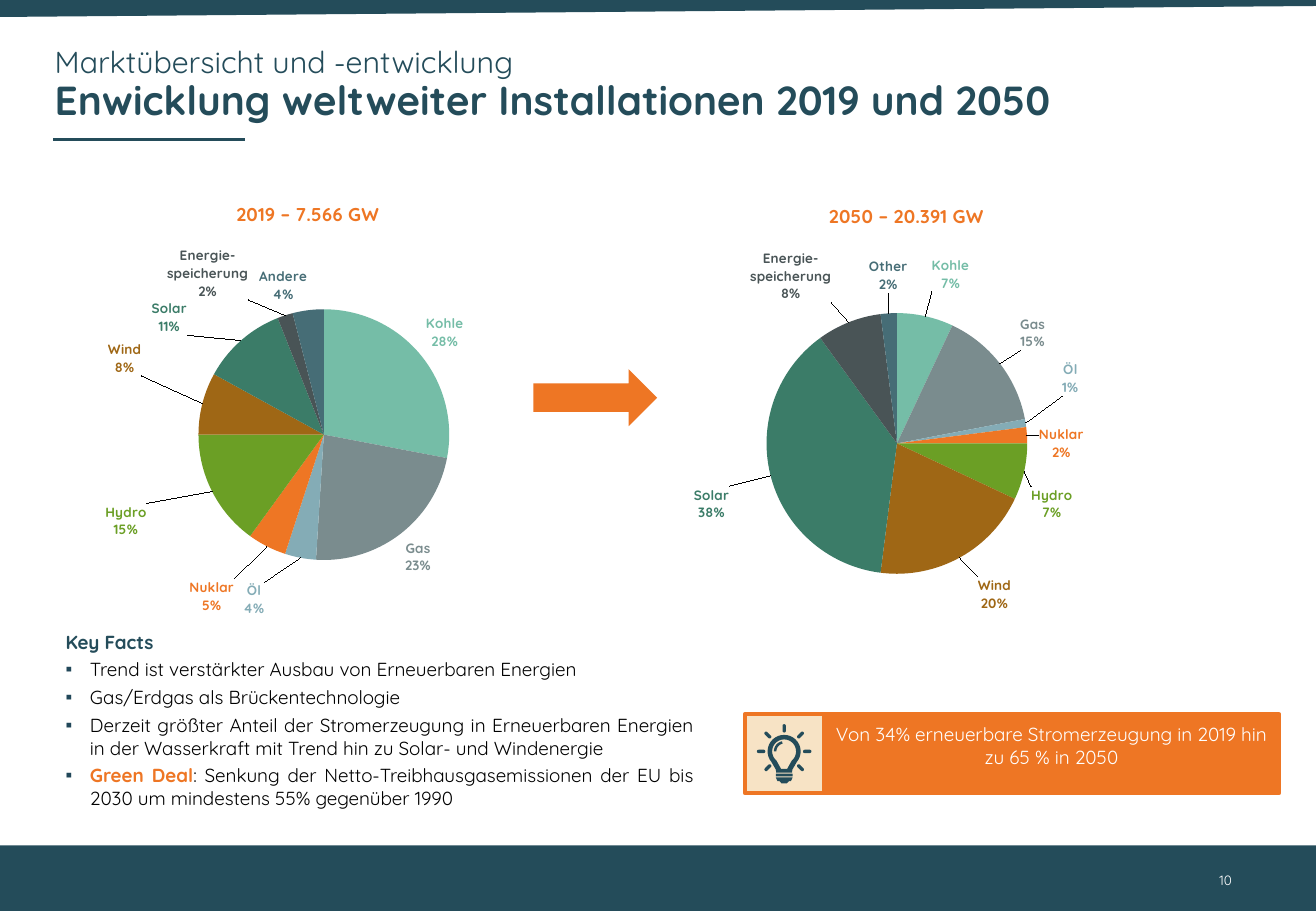
from math import cos, radians, sin

from lxml.etree import SubElement
from pptx import Presentation
from pptx.chart.data import CategoryChartData
from pptx.dml.color import RGBColor
from pptx.enum.chart import XL_CHART_TYPE, XL_LABEL_POSITION
from pptx.enum.shapes import MSO_CONNECTOR, MSO_SHAPE
from pptx.enum.text import MSO_ANCHOR, MSO_AUTO_SIZE, PP_ALIGN
from pptx.oxml import parse_xml
from pptx.oxml.ns import nsdecls, qn
from pptx.util import Pt

FONT = "Quicksand"
COLORS = {"petrol": "244C5A", "orange": "EE7624", "cream": "F7E3C5", "white": "FFFFFF",
          "black": "000000", "bullet": "214759", "leader": "A0A0A0"}
ENERGY = {"Kohle": "75BDA7", "Gas": "7A8C8E", "Öl": "84ACB6", "Nuklar": "EE7624",
          "Hydro": "6B9F25", "Wind": "9F6715", "Solar": "3B7C68",
          "Energie-\nspeicherung": "495456", "Andere": "466D76"}
BULB_X, BULB_Y = 464.8, 445.4


def style_font(font, size, color, bold=False):
    """Set typeface, size, colour and weight."""
    font.name, font.size, font.bold = FONT, Pt(size), bold
    font.color.rgb = RGBColor.from_string(color)


def add_span(para, text, size, color, bold=False):
    """Add one formatted run."""
    span = para.add_run()
    span.text = text
    style_font(span.font, size, COLORS[color], bold)


def set_frame(frame, insets, anchor):
    """Set wrapping, insets (left, top, right, bottom) and anchor."""
    frame.word_wrap = True
    frame.auto_size = MSO_AUTO_SIZE.NONE
    frame.vertical_anchor = anchor
    frame.margin_left, frame.margin_top, frame.margin_right, frame.margin_bottom = map(Pt, insets)


def move(shape, left, top, width, height):
    """Place a shape."""
    shape.left, shape.top, shape.width, shape.height = map(Pt, (left, top, width, height))


def paint(shape, fill, line=None):
    """Give a shape a flat fill and an optional outline."""
    shape.shadow.inherit = False
    shape.fill.solid()
    shape.fill.fore_color.rgb = RGBColor.from_string(COLORS[fill])
    if line:
        shape.line.color.rgb = RGBColor.from_string(COLORS[line])
        shape.line.width = Pt(2.25)
    else:
        shape.line.fill.background()


def add_block(page, kind, bounds, fill, line=None):
    """Add a filled preset shape."""
    shape = page.shapes.add_shape(kind, *map(Pt, bounds))
    paint(shape, fill, line)
    return shape


def add_outline(page, contours, fill):
    """Add one freeform made of closed contours."""
    contours = [[(Pt(x), Pt(y)) for x, y in contour] for contour in contours]
    builder = page.shapes.build_freeform(*contours[0][0])
    for number, contour in enumerate(contours):
        if number:
            builder.move_to(*contour[0])
        builder.add_line_segments(contour[1:], close=True)
    paint(builder.convert_to_shape(), fill)


def add_rule(page, left, right, top):
    """Add the line under the title."""
    rule = page.shapes.add_connector(MSO_CONNECTOR.STRAIGHT, Pt(left), Pt(top), Pt(right), Pt(top))
    rule.line.color.rgb = RGBColor.from_string(COLORS["petrol"])
    rule.line.width = Pt(1.5)
    SubElement(rule.element.spPr, qn("a:effectLst"))


def set_layout(element, index, settings):
    """Give a chart part a manual layout."""
    for old in element.findall(qn("c:layout")):
        element.remove(old)
    items = "".join(f'<c:{name} val="{value}"/>' for name, value in settings.items())
    element.insert(index, parse_xml(
        f'<c:layout {nsdecls("c")}><c:manualLayout>{items}</c:manualLayout></c:layout>'))


def add_pie(page, bounds, title, title_left, names, values, plot, offsets):
    """Add a pie chart with coloured, shifted labels."""
    data = CategoryChartData()
    data.categories = names
    data.add_series("Series 1", values)
    chart = page.shapes.add_chart(XL_CHART_TYPE.PIE, *map(Pt, bounds), data).chart
    style_font(chart.font, 10, COLORS["black"])
    chart.has_legend = False
    chart.has_title = True
    add_span(chart.chart_title.text_frame.paragraphs[0], title, 11, "orange", True)
    edge = {"xMode": "edge", "yMode": "edge"}
    set_layout(chart.chart_title.element if hasattr(chart.chart_title, "element")
               else chart.element.xpath("//c:title")[0], 1, {**edge, "x": title_left, "y": 0.02})
    set_layout(chart.element.xpath("//c:plotArea")[0], 0,
               {"layoutTarget": "inner", **edge, **dict(zip("xywh", plot))})
    chart.plots[0].vary_by_categories = True
    series = chart.plots[0].series[0]
    labels = series.data_labels
    labels.show_value = False
    labels.show_percentage = labels.show_category_name = True
    labels.number_format, labels.number_format_is_linked = "0%", False
    labels.position = XL_LABEL_POSITION.OUTSIDE_END
    for index, color in enumerate(ENERGY.values()):
        point = series.points[index]
        point.format.fill.solid()
        point.format.fill.fore_color.rgb = RGBColor.from_string(color)
        point.format.line.fill.background()
        style_font(point.data_label.font, 8, color, True)
        point.data_label.position = XL_LABEL_POSITION.OUTSIDE_END
    for label, offset in zip(chart.element.xpath("//c:dLbl"), offsets):
        label.find(qn("c:showVal")).set("val", "0")
        for flag in ("c:showCatName", "c:showPercent"):
            label.find(qn(flag)).set("val", "1")
        SubElement(label, qn("c:separator")).text = "\n"
        if any(offset):
            set_layout(label, 1, dict(zip("xy", offset)))


def arc(radius, start, end):
    """Return points on an arc around the bulb centre."""
    steps = 24
    angles = [radians(start + (end - start) * step / steps) for step in range(steps + 1)]
    return [(BULB_X + radius * cos(angle), BULB_Y + radius * sin(angle)) for angle in angles]


def around_bulb(points):
    """Shift points to the bulb centre."""
    return [(BULB_X + x, BULB_Y + y) for x, y in points]


def add_bulb(page):
    """Draw the light bulb with its base and rays."""
    glass = arc(9.8, 140, 400) + around_bulb([(4.9, 10.8), (4.7, 12.5), (-4.7, 12.5), (-4.9, 10.8)])
    hollow = arc(7.1, 130, 410) + around_bulb([(1.8, 10.4), (-1.8, 10.4)])
    add_outline(page, [glass, hollow], "petrol")
    add_outline(page, [arc(6.1, 180, 258) + arc(4.6, 258, 180)], "petrol")
    add_outline(page, [around_bulb([(-5, 15.4), (5, 15.4), (4, 17.6), (2.8, 17.6), (1.5, 19),
                                    (-1.5, 19), (-2.8, 17.6), (-4, 17.6)])], "petrol")
    add_block(page, MSO_SHAPE.ROUNDED_RECTANGLE, (BULB_X - 5, BULB_Y + 13.2, 10, 1.7), "petrol")
    for angle in range(135, 406, 45):
        x = BULB_X + 13.7 * cos(radians(angle))
        y = BULB_Y + 13.7 * sin(radians(angle))
        ray = add_block(page, MSO_SHAPE.ROUNDED_RECTANGLE, (x - 2.5, y - 1, 5, 2), "petrol")
        ray.adjustments[0] = 0.5
        ray.rotation = angle % 360


def add_title(page, topic, headline):
    """Fill the title placeholder with two lines."""
    title = page.shapes.title
    move(title, 32.4, 28, 705, 46)
    set_frame(title.text_frame, (0, 0, 0, 0), MSO_ANCHOR.TOP)
    para = title.text_frame.paragraphs[0]
    para.alignment, para.line_spacing = PP_ALIGN.LEFT, 0.9
    add_span(para, topic, 18, "petrol")
    para.add_line_break()
    add_span(para, headline, 24, "petrol", True)


def add_facts(page, heading, facts):
    """Fill the body placeholder with a heading and bullets."""
    body = page.placeholders[1]
    move(body, 31.7, 370, 386.6, 126.7)
    frame = body.text_frame
    set_frame(frame, (7.2, 3.6, 7.2, 3.6), MSO_ANCHOR.TOP)
    for index, spans in enumerate([[(heading, "petrol", True)]] + facts):
        para = frame.add_paragraph() if index else frame.paragraphs[0]
        para.alignment, para.space_before = PP_ALIGN.JUSTIFY, Pt(3 if index else 0)
        properties = para._p.get_or_add_pPr()
        properties.set("marL", str(Pt(14.4 if index else 0)))
        properties.set("indent", str(Pt(-14.4 if index else 0)))
        if index:
            color = SubElement(properties, qn("a:buClr"))
            SubElement(color, qn("a:srgbClr"), val=COLORS["bullet"])
            SubElement(properties, qn("a:buChar"), char="▪")
        else:
            SubElement(properties, qn("a:buNone"))
        for text, color, bold in spans:
            add_span(para, text, 11.2, color, bold)


def main():
    """Build the slide."""
    deck = Presentation()
    deck.slide_width, deck.slide_height = Pt(780), Pt(540)
    page = deck.slides.add_slide(deck.slide_layouts[1])
    add_outline(page, [[(0, 0), (780, 0), (780, 3.6), (0, 10.1)]], "petrol")
    add_rule(page, 31.7, 145.4, 82.8)
    add_block(page, MSO_SHAPE.RECTANGLE, (0, 501.1, 780, 38.9), "petrol")
    add_title(page, "Marktübersicht und -entwicklung", "Enwicklung weltweiter Installationen 2019 und 2050")
    number = page.shapes.add_textbox(*map(Pt, (707.8, 507.6, 29.5, 28.8))).text_frame
    set_frame(number, (7.2, 3.6, 7.2, 3.6), MSO_ANCHOR.MIDDLE)
    number.paragraphs[0].alignment = PP_ALIGN.RIGHT
    add_span(number.paragraphs[0], "10", 8, "white")
    names = list(ENERGY)
    add_pie(page, (41.8, 111.6, 291.6, 256.3), "2019 – 7.566 GW", 0.33, names,
            (28, 23, 4, 5, 15, 8, 11, 2, 4), (0.26, 0.28, 0.51, 0.58),
            [(0, 0), (0, 0), (-0.07, 0.04), (-0.06, 0.06), (-0.12, 0.02), (-0.11, -0.06),
             (-0.1, 0), (-0.07, -0.02), (0, 0)])
    add_pie(page, (390.2, 113, 291.6, 256.3), "2050 – 20.391 GW", 0.34, names[:-1] + ["Other"],
            (7, 15, 1, 2, 7, 20, 38, 8, 2), (0.22, 0.28, 0.53, 0.61),
            [(0.01, -0.04), (0.03, -0.02), (0.06, -0.06), (0.01, 0.02), (0, 0.03), (0.03, 0.03),
             (-0.07, 0.02), (-0.03, -0.03), (0, -0.03)])
    add_block(page, MSO_SHAPE.RIGHT_ARROW, (316.1, 218.9, 73.4, 33.8), "orange")
    add_block(page, MSO_SHAPE.RECTANGLE, (441.4, 423.4, 284.4, 46.8), "cream", "orange")
    callout = add_block(page, MSO_SHAPE.RECTANGLE, (488.2, 423.4, 270, 46.8), "orange", "orange")
    set_frame(callout.text_frame, (4, 3.6, 4, 13.6), MSO_ANCHOR.MIDDLE)
    callout.text_frame.paragraphs[0].alignment = PP_ALIGN.CENTER
    add_span(callout.text_frame.paragraphs[0],
             "Von 34% erneuerbare Stromerzeugung in 2019 hin zu 65 % in 2050", 11.2, "white")
    add_bulb(page)
    add_facts(page, "Key Facts", [
        [("Trend ist verstärkter Ausbau von Erneuerbaren Energien", "black", False)],
        [("Gas/Erdgas als Brückentechnologie", "black", False)],
        [("Derzeit größter Anteil der Stromerzeugung in Erneuerbaren Energien in der "
          "Wasserkraft mit Trend hin zu Solar- und Windenergie", "black", False)],
        [("Green Deal", "orange", True),
         (": Senkung der Netto-Treibhausgasemissionen der EU bis 2030 um mindestens 55% "
          "gegenüber 1990", "black", False)]])
    deck.save("out.pptx")


if __name__ == "__main__":
    main()
